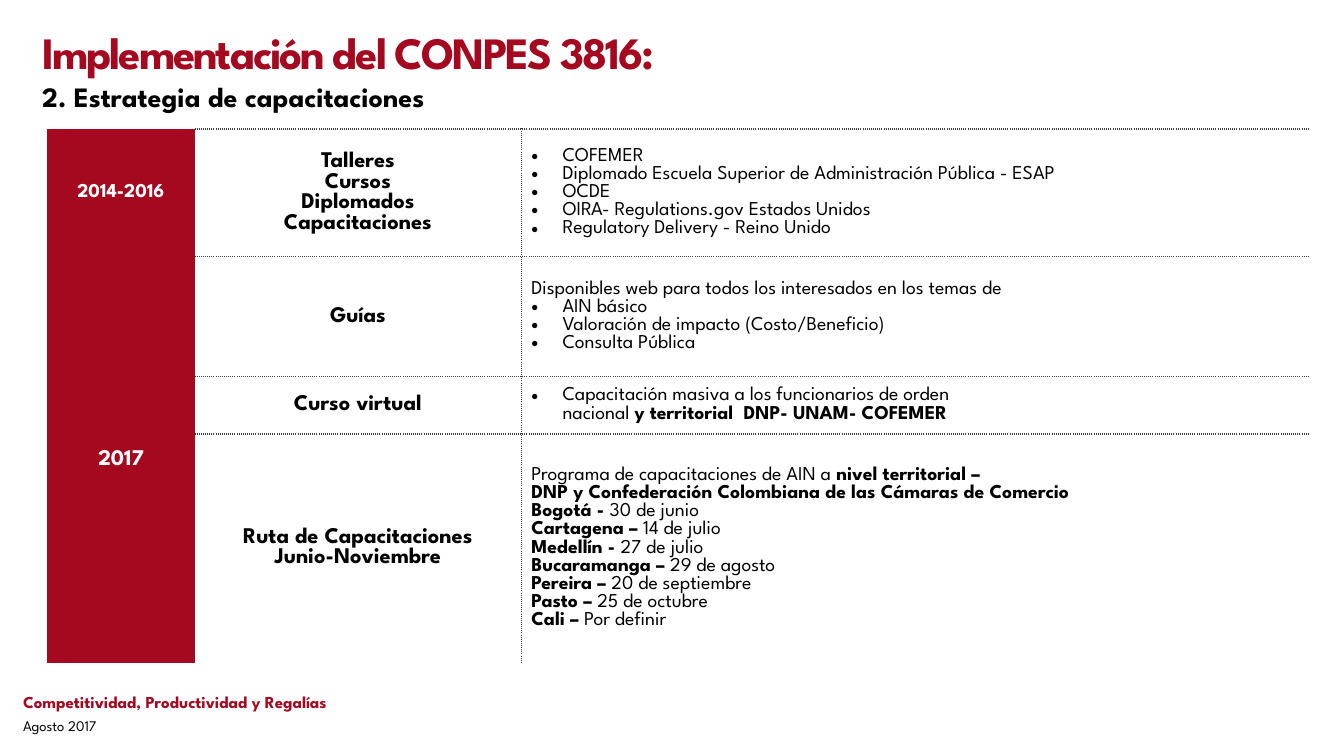
"""Build the CONPES 3816 training strategy slide."""
from dataclasses import dataclass

from lxml.etree import SubElement
from pptx import Presentation
from pptx.dml.color import RGBColor
from pptx.enum.text import MSO_ANCHOR, PP_ALIGN
from pptx.oxml.ns import qn
from pptx.util import Inches, Pt

FONT = "League Spartan"
CRIMSON, BLACK, WHITE, GREY = "A4091F", "000000", "FFFFFF", "404040"
BULLET_INDENT = Inches(0.31)


@dataclass
class Span:
    text: str
    bold: bool = False


@dataclass
class Line:
    spans: list[Span]
    size: float = 14
    color: str = BLACK
    bullet: bool = False
    centered: bool = False
    space_before: float = 0
    line_spacing: float = 1.0


def plain(text: str) -> Line:
    return Line([Span(text)])


def bullet(*spans: Span) -> Line:
    return Line(list(spans), bullet=True)


def heading(text: str, size: float = 16, color: str = BLACK) -> Line:
    return Line([Span(text, True)], size, color, centered=True)


def stop(city: str, date: str) -> Line:
    return Line([Span(city + " ", True), Span(date)])


PERIODS = [heading("2014-2016", 14, WHITE), heading("2017", 16, WHITE)]
ACTIVITIES = [
    ["Talleres", "Cursos", "Diplomados", "Capacitaciones"],
    ["Guías"],
    ["Curso virtual"],
    ["Ruta de Capacitaciones", "Junio-Noviembre"],
]
DETAILS = [
    [bullet(Span(text)) for text in (
        "COFEMER",
        "Diplomado Escuela Superior de Administración Pública - ESAP",
        "OCDE",
        "OIRA- Regulations.gov Estados Unidos",
        "Regulatory Delivery - Reino Unido",
    )],
    [plain("Disponibles web para todos los interesados en los temas de")]
    + [bullet(Span(text)) for text in (
        "AIN básico", "Valoración de impacto (Costo/Beneficio)", "Consulta Pública")],
    [bullet(Span("Capacitación masiva a los funcionarios de orden\nnacional "),
            Span("y territorial  DNP- UNAM- COFEMER", True))],
    [
        Line([Span("Programa de capacitaciones de AIN a "), Span("nivel territorial –", True)]),
        Line([Span("DNP y Confederación Colombiana de las Cámaras de Comercio", True)]),
        stop("Bogotá -", "30 de junio"),
        stop("Cartagena –", "14 de julio"),
        stop("Medellín -", "27 de julio"),
        stop("Bucaramanga –", "29 de agosto"),
        stop("Pereira –", "20 de septiembre"),
        stop("Pasto –", "25 de octubre"),
        stop("Cali –", "Por definir"),
    ],
]
COLUMN_WIDTHS = [1.46, 3.24, 7.82]
ROW_HEIGHTS = [1.19, 1.19, 0.46, 2.27]


def rgb(color: str) -> RGBColor:
    return RGBColor.from_string(color)


def write(frame, lines: list[Line]) -> None:
    """Fill a text frame with formatted paragraphs."""
    for index, line in enumerate(lines):
        para = frame.add_paragraph() if index else frame.paragraphs[0]
        para.alignment = PP_ALIGN.CENTER if line.centered else PP_ALIGN.LEFT
        para.line_spacing = line.line_spacing
        para.space_before = Pt(line.space_before)
        if line.bullet:
            properties = para._p.get_or_add_pPr()
            properties.set("marL", str(BULLET_INDENT))
            properties.set("indent", str(-BULLET_INDENT))
            SubElement(properties, qn("a:buFont"), typeface="Arial")
            SubElement(properties, qn("a:buChar"), char="•")
        para.font.name = FONT
        para.font.size = Pt(line.size)
        para.font.color.rgb = rgb(line.color)
        uniform = len({span.bold for span in line.spans}) == 1
        if uniform:
            para.font.bold = line.spans[0].bold
        for span in line.spans:
            for part, text in enumerate(span.text.split("\n")):
                if part:
                    para.add_line_break()
                run = para.add_run()
                run.text = text
                if not uniform:
                    run.font.bold = span.bold


def set_borders(cell, dotted: set[str]) -> None:
    """Give the named sides (L, R, T, B) a dotted line and clear the others."""
    properties = cell._tc.get_or_add_tcPr()
    for side in "LRTB":
        edge = SubElement(properties, qn(f"a:ln{side}"), w=str(Pt(1)))
        if side in dotted:
            fill = SubElement(edge, qn("a:solidFill"))
            SubElement(fill, qn("a:srgbClr"), val=GREY)
            SubElement(edge, qn("a:prstDash"), val="sysDot")
        else:
            SubElement(edge, qn("a:noFill"))


def dotted_sides(row: int, column: int) -> set[str]:
    """Return the dotted sides of a cell: row rules and one column rule."""
    if column == 0:
        return set()
    sides = {"T", "R" if column == 1 else "L"}
    return sides | {"B"} if row < len(ROW_HEIGHTS) - 1 else sides


def add_schedule(page) -> None:
    """Add the table of periods, activities and details."""
    table = page.shapes.add_table(
        len(ROW_HEIGHTS), len(COLUMN_WIDTHS), Inches(0.47), Inches(1.28),
        Inches(sum(COLUMN_WIDTHS)), Inches(sum(ROW_HEIGHTS))).table
    table.first_row = table.horz_banding = False
    for column, width in zip(table.columns, COLUMN_WIDTHS):
        column.width = Inches(width)
    for row, height in zip(table.rows, ROW_HEIGHTS):
        row.height = Inches(height)
    for row_index, row in enumerate(table.rows):
        period = PERIODS[row_index:row_index + 1]
        activity = [heading(text) for text in ACTIVITIES[row_index]]
        contents = [period, activity, DETAILS[row_index]]
        for column_index, (cell, lines) in enumerate(zip(row.cells, contents)):
            set_borders(cell, dotted_sides(row_index, column_index))
            if column_index == 0:
                cell.fill.solid()
                cell.fill.fore_color.rgb = rgb(CRIMSON)
            else:
                cell.fill.background()
            cell.vertical_anchor = MSO_ANCHOR.MIDDLE
            write(cell.text_frame, lines)
    table.cell(1, 0).merge(table.cell(len(ROW_HEIGHTS) - 1, 0))


def place_text(box, left: float, top: float, width: float, height: float,
               lines: list[Line]) -> None:
    """Position a text shape and write its lines, centred vertically."""
    box.left, box.top = Inches(left), Inches(top)
    box.width, box.height = Inches(width), Inches(height)
    box.text_frame.word_wrap = True
    box.text_frame.vertical_anchor = MSO_ANCHOR.MIDDLE
    write(box.text_frame, lines)


def main() -> None:
    deck = Presentation()
    deck.slide_width, deck.slide_height = Inches(13.33), Inches(7.5)
    page = deck.slides.add_slide(deck.slide_layouts[5])

    title = page.shapes.title
    place_text(title, 0.32, 0.21, 12.7, 0.61,
               [Line([Span("Implementación del CONPES 3816:", True)], 32, CRIMSON)])
    title.text_frame.paragraphs[0].runs[0]._r.get_or_add_rPr().set("spc", "-150")

    subtitle = page.shapes.add_textbox(0, 0, 0, 0)
    place_text(subtitle, 0.32, 0.78, 12.7, 0.39,
               [Line([Span("2. Estrategia de capacitaciones", True)], 20, line_spacing=0.9)])

    add_schedule(page)

    footer = page.shapes.add_textbox(0, 0, 0, 0)
    place_text(footer, 0.13, 6.8, 9.15, 0.55, [
        Line([Span("Competitividad, Productividad y Regalías", True)], 12, CRIMSON),
        Line([Span("Agosto 2017")], 10.5, space_before=3),
    ])
    deck.save("out.pptx")


if __name__ == "__main__":
    main()
